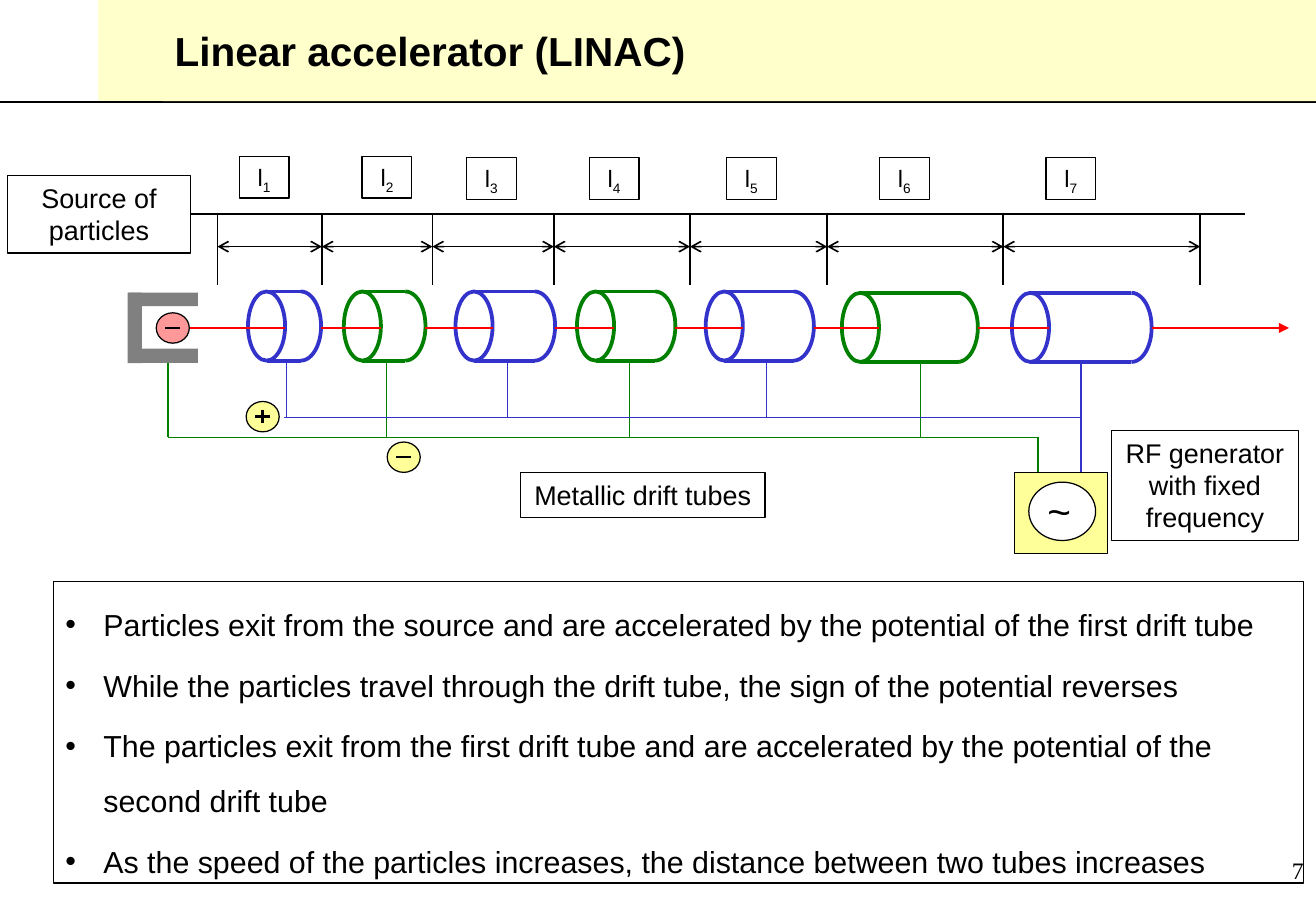
from lxml import etree
from pptx import Presentation
from pptx.dml.color import RGBColor
from pptx.enum.shapes import MSO_CONNECTOR, MSO_SHAPE
from pptx.enum.text import MSO_ANCHOR, PP_ALIGN
from pptx.oxml.ns import qn
from pptx.util import Pt

RECT, OVAL, ARC = MSO_SHAPE.RECTANGLE, MSO_SHAPE.OVAL, MSO_SHAPE.ARC
STRAIGHT = MSO_CONNECTOR.STRAIGHT
LEFT, CENTER, RIGHT = PP_ALIGN.LEFT, PP_ALIGN.CENTER, PP_ALIGN.RIGHT
TOP, MIDDLE = MSO_ANCHOR.TOP, MSO_ANCHOR.MIDDLE

BLACK = RGBColor(0x00, 0x00, 0x00)
WHITE = RGBColor(0xFF, 0xFF, 0xFF)
CREAM = RGBColor(0xFF, 0xFF, 0xCC)
YELLOW = RGBColor(0xFF, 0xFF, 0x99)
PINK = RGBColor(0xFF, 0x99, 0x99)
GRAY = RGBColor(0x80, 0x80, 0x80)
RED = RGBColor(0xFF, 0x00, 0x00)
BLUE = RGBColor(0x33, 0x33, 0xCC)
GREEN = RGBColor(0x00, 0x80, 0x00)

TITLE = "Linear accelerator (LINAC)"
POINTS = [
    "Particles exit from the source and are accelerated by the potential of the first drift tube",
    "While the particles travel through the drift tube, the sign of the potential reverses",
    "The particles exit from the first drift tube and are accelerated by the potential "
    "of the second drift tube",
    "As the speed of the particles increases, the distance between two tubes increases",
]
# left, right, top, x of the feed wire
TUBES = [
    (147, 190.3, 172.8, 169.9),
    (203.8, 252.2, 172.8, 229),
    (270, 329, 172.8, 301),
    (342, 400.3, 172.8, 373),
    (418.3, 482.4, 172.8, 454.3),
    (499, 579.6, 173.6, 545.8),
    (599.8, 682.6, 173.6, 640.8),
]
TICKS = [128.9, 190.8, 256.3, 328.3, 409, 490.3, 594.7, 711.4]
LABELS = [(141.8, 92.9), (214.6, 92.9), (276.5, 93.6), (349.2, 93.6),
          (430.6, 93.6), (521.3, 93.6), (619.9, 93.6)]
CUP = [(76.3, 206.6, 41, 8.6), (76.3, 173.5, 41, 7.9), (75.6, 173.5, 8.6, 41.8)]

AXIS_Y, SPAN_Y, BEAM_Y = 127, 146.2, 194.4
PLUS_Y, MINUS_Y = 247.5, 259.2
TUBE_H, FACE_W, END_R = 41, 22, 12
GEN_TOP = 280

prs = Presentation()
prs.slide_width, prs.slide_height = Pt(780), Pt(540)
slide = prs.slides.add_slide(prs.slide_layouts[6])
shapes = slide.shapes


def shape(kind, x, y, w, h, fill=None, line=None, width=0.75):
    item = shapes.add_shape(kind, Pt(x), Pt(y), Pt(w), Pt(h))
    item.shadow.inherit = False
    if fill is None:
        item.fill.background()
    else:
        item.fill.solid()
        item.fill.fore_color.rgb = fill
    if line is None:
        item.line.fill.background()
    else:
        item.line.color.rgb = line
        item.line.width = Pt(width)
    return item


def line(x1, y1, x2, y2, color=BLACK, width=0.75, head=None, tail=None):
    item = shapes.add_connector(STRAIGHT, Pt(x1), Pt(y1), Pt(x2), Pt(y2))
    item.line.color.rgb = color
    item.line.width = Pt(width)
    for tag, style in (("a:headEnd", head), ("a:tailEnd", tail)):
        if style:
            etree.SubElement(item.line._get_or_add_ln(), qn(tag), type=style)
    etree.SubElement(item._element.spPr, qn("a:effectLst"))
    return item


def write(item, text, size=16, font="Arial", bold=False, align=CENTER, anchor=TOP,
          wrap=True, sub="", bullet=False, before=0, spacing=None):
    """Fill a shape with one paragraph per line of text; sub is a subscript."""
    frame = item.text_frame
    frame.word_wrap = wrap
    frame.vertical_anchor = anchor
    for i, words in enumerate(text.split("\n")):
        para = frame.add_paragraph() if i else frame.paragraphs[0]
        para.alignment = align
        para.line_spacing = spacing
        para.space_before = Pt(before if i else 0)
        if bullet:
            props = para._p.get_or_add_pPr()
            props.set("marL", str(Pt(22.5)))
            props.set("indent", str(Pt(-22.5)))
            etree.SubElement(props, qn("a:buFont"), typeface="Arial")
            etree.SubElement(props, qn("a:buChar"), char="•")
        for part in filter(None, (words, sub)):
            run = para.add_run()
            run.text = part
            run.font.name = font
            run.font.size = Pt(size)
            run.font.bold = bold
            run.font.color.rgb = BLACK
        if sub:
            run.font._element.set("baseline", "-25000")
    return item


def badge(x, y, fill, plus=False):
    """Draw a charge sign in a circle centred on x, y."""
    shape(OVAL, x - 9.8, y - 9, 19.6, 18, fill, BLACK)
    line(x - 4.3, y, x + 4.3, y, width=1.5)
    if plus:
        line(x, y - 4, x, y + 4, width=1.5)


def tube(left, right, top, color):
    shape(OVAL, left, top, FACE_W, TUBE_H, line=color, width=2.25)
    for y in (top, top + TUBE_H):
        line(left + FACE_W / 2, y, right - END_R, y, color, 2.25)
    end = shape(ARC, right - 2 * END_R, top, 2 * END_R, TUBE_H, line=color, width=2.25)
    end.adjustments[0], end.adjustments[1] = 162, 54  # from 270 to 90 degrees


# Header
shape(RECT, 58.3, 0, 54.7, 60, CREAM)
line(0, 60.5, 780, 60.5)
write(shape(RECT, 96.5, 0, 683.5, 60, CREAM), TITLE, size=24, bold=True,
      align=LEFT, anchor=MIDDLE)

# Length scale
source = write(shape(RECT, 4.3, 104, 108.7, 46, line=BLACK), "Source of particles")
axis = line(113, AXIS_Y, 738, AXIS_Y, width=1)
axis.begin_connect(source, 3)
for x in TICKS:
    line(x, AXIS_Y, x, 169, width=1)
for x1, x2 in zip(TICKS, TICKS[1:]):
    line(x1, SPAN_Y, x2, SPAN_Y, width=1, head="arrow", tail="arrow")
for n, (x, y) in enumerate(LABELS, 1):
    write(shape(RECT, x, y, 29.5, 24.5, line=BLACK), "l", size=14, sub=str(n))

# Tubes, feed wires and beam
start = 112.3
for i, (left, right, top, feed) in enumerate(TUBES):
    color, rail = ((BLUE, PLUS_Y), (GREEN, MINUS_Y))[i % 2]
    tube(left, right, top, color)
    stop = GEN_TOP if i == len(TUBES) - 1 else rail
    line(feed, top + TUBE_H, feed, stop, color)
    line(start, BEAM_Y, left + FACE_W, BEAM_Y, RED, 1)
    start = right
line(start, BEAM_Y, 764, BEAM_Y, RED, 1, tail="triangle")

# Rails, source cup and charges
line(168.5, PLUS_Y, TUBES[-1][3], PLUS_Y, BLUE)
line(99.6, MINUS_Y, 615.3, MINUS_Y, GREEN)
line(99.6, 212, 99.6, MINUS_Y, GREEN)
line(615.3, MINUS_Y, 615.3, GEN_TOP, GREEN)
for box in CUP:
    shape(RECT, *box, fill=GRAY)
badge(102.4, BEAM_Y, PINK)
badge(155.7, 247, YELLOW, plus=True)
badge(239.3, 271, YELLOW)

# Generator and captions
shape(RECT, 601.2, GEN_TOP, 55.4, 48.2, YELLOW, BLACK)
shape(OVAL, 609.8, 285.8, 39.6, 34.6, WHITE, BLACK)
write(shapes.add_textbox(Pt(613.4), Pt(284.4), Pt(28.8), Pt(36)), "~", size=24, wrap=False)
write(shape(RECT, 308.5, 280, 145, 26.6, line=BLACK), "Metallic drift tubes", wrap=False)
write(shape(RECT, 658.8, 255, 110.9, 65.5, line=BLACK), "RF generator with fixed frequency")

# Explanation and slide number
write(shape(RECT, 31.7, 344.9, 740.9, 178.5, line=BLACK), "\n".join(POINTS), size=18,
      align=LEFT, bullet=True, before=3.6, spacing=1.5)
write(shapes.add_textbox(Pt(617.8), Pt(504), Pt(162), Pt(36)), "7", size=14,
      font="Times New Roman", align=RIGHT)

prs.save("out.pptx")
